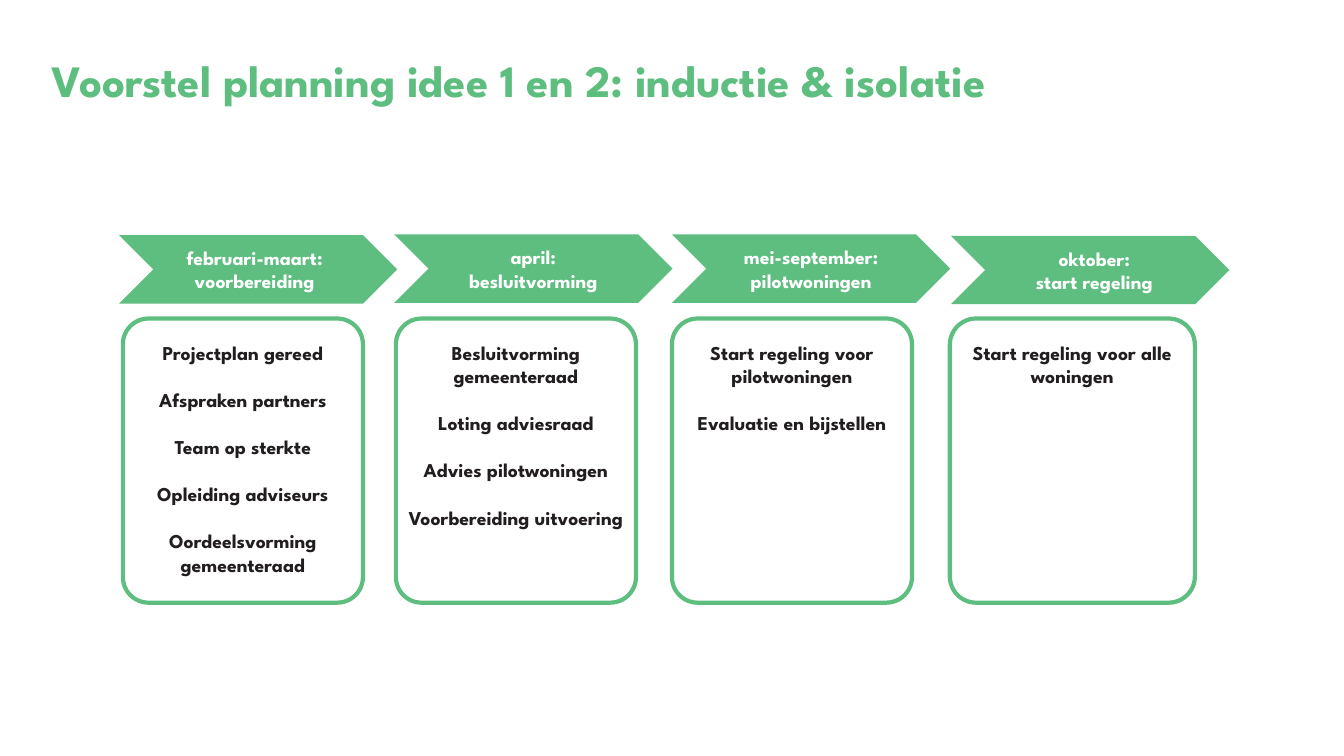
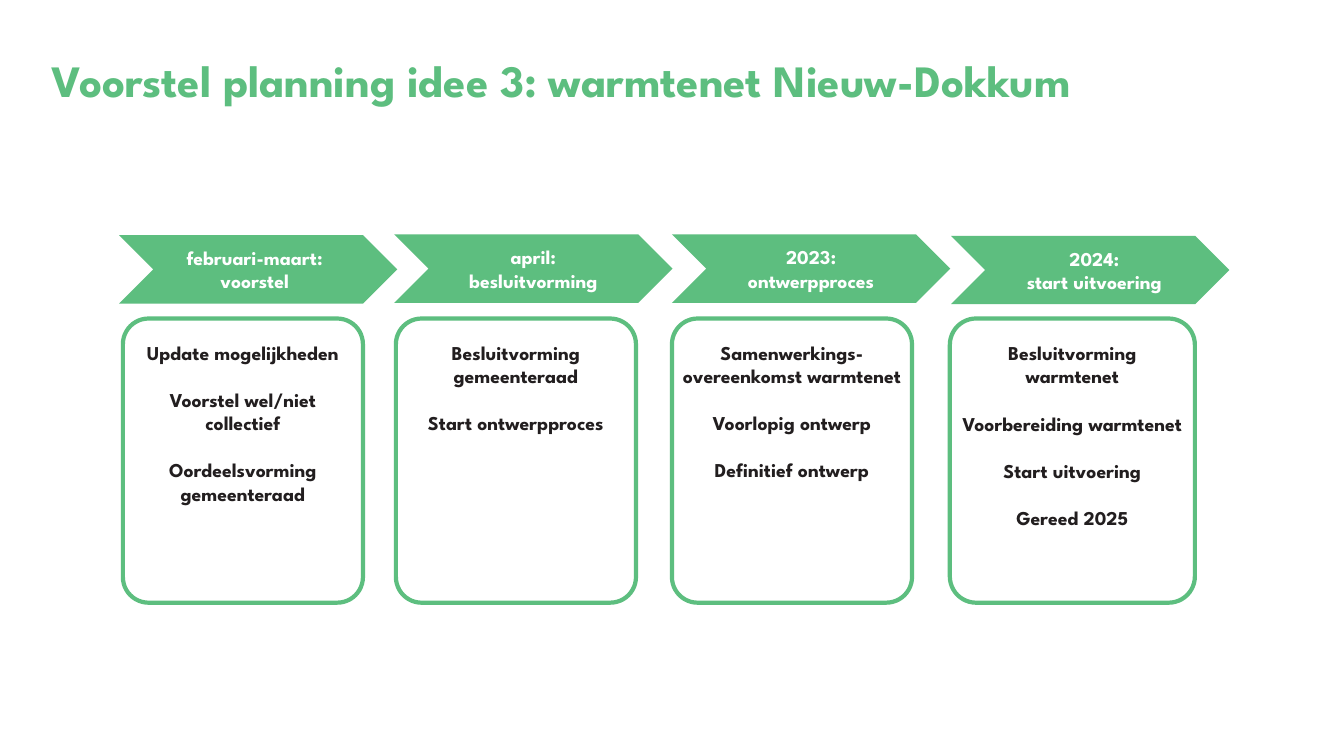
import pptx
import pptx.util
import pptx.dml.color
import pptx.enum.shapes
import pptx.enum.text

Pt = pptx.util.Pt
SHAPE = pptx.enum.shapes.MSO_SHAPE
ALIGN = pptx.enum.text.PP_ALIGN
ANCHOR = pptx.enum.text.MSO_ANCHOR

COLUMNS = [
    {"arrow_left": 85, "arrow_top": 168, "card_left": 87.8, "card_width": 171.5, "text_shift": -2.5},
    {"arrow_left": 281.6, "arrow_top": 167.5, "card_left": 282.8, "card_width": 171.5, "text_shift": 0},
    {"arrow_left": 480, "arrow_top": 167.5, "card_left": 480, "card_width": 171.5, "text_shift": 0},
    {"arrow_left": 679.3, "arrow_top": 168.5, "card_left": 678.5, "card_width": 175, "text_shift": 3},
]

PLANS = {
    "Voorstel planning idee 1 en 2: inductie & isolatie": [
        (["februari-maart:", "voorbereiding"],
         ["Projectplan gereed", "Afspraken partners", "Team op sterkte",
          "Opleiding adviseurs", "Oordeelsvorming gemeenteraad"]),
        (["april:", "besluitvorming"],
         ["Besluitvorming gemeenteraad", "Loting adviesraad",
          "Advies pilotwoningen", "Voorbereiding uitvoering"]),
        (["mei-september:", "pilotwoningen"],
         ["Start regeling voor pilotwoningen", "Evaluatie en bijstellen"]),
        (["oktober:", "start regeling"],
         ["Start regeling voor alle woningen"]),
    ],
    "Voorstel planning idee 3: warmtenet Nieuw-Dokkum": [
        (["februari-maart:", "voorstel"],
         ["Update mogelijkheden", "Voorstel wel/niet collectief",
          "Oordeelsvorming gemeenteraad"]),
        (["april:", "besluitvorming"],
         ["Besluitvorming gemeenteraad", "Start ontwerpproces"]),
        (["2023:", "ontwerpproces"],
         ["Samenwerkings-overeenkomst warmtenet", "Voorlopig ontwerp",
          "Definitief ontwerp"]),
        (["2024:", "start uitvoering"],
         ["Besluitvorming warmtenet", "Voorbereiding warmtenet",
          "Start uitvoering", "Gereed 2025"]),
    ],
}


def color(value):
    return pptx.dml.color.RGBColor.from_string(value)


def set_values(target, values):
    for name, value in values.items():
        setattr(target, name, value)


class Planner:
    green = "5DBE7F"
    white = "FFFFFF"
    ink = "221E1F"
    font = "League Spartan"

    def __init__(self):
        self.deck = pptx.Presentation()
        set_values(self.deck, {"slide_width": Pt(960), "slide_height": Pt(540)})
        self.page = None

    def new_page(self):
        self.page = self.deck.slides.add_slide(self.deck.slide_layouts[6])

    def add_text(self, box, lines, size, ink, frame_format, para_format, gap=0):
        frame = box.text_frame
        set_values(frame, {"word_wrap": True, **frame_format})
        for index, line in enumerate(lines):
            para = frame.add_paragraph() if index else frame.paragraphs[0]
            set_values(para, para_format)
            if index and gap:
                para.space_before = Pt(gap)
            span = para.add_run()
            span.text = line
            set_values(span.font, {"name": self.font, "size": Pt(size), "bold": True})
            span.font.color.rgb = color(ink)

    def shape(self, kind, left, top, width, height, fill):
        box = self.page.shapes.add_shape(kind, Pt(left), Pt(top), Pt(width), Pt(height))
        box.shadow.inherit = False
        box.fill.solid()
        box.fill.fore_color.rgb = color(fill)
        return box

    def title(self, text):
        box = self.page.shapes.add_textbox(Pt(30), Pt(29), Pt(900), Pt(60))
        self.add_text(box, [text], 32, self.green,
                      {"vertical_anchor": ANCHOR.MIDDLE},
                      {"alignment": ALIGN.LEFT, "line_spacing": 0.9})

    def arrow(self, column, lines):
        box = self.shape(SHAPE.CHEVRON, column["arrow_left"], column["arrow_top"],
                         198.8, 48.8, self.green)
        box.line.fill.background()
        shift = column["text_shift"]
        self.add_text(box, lines, 14, self.white,
                      {"vertical_anchor": ANCHOR.MIDDLE,
                       "margin_left": Pt(max(0, 2 * shift)),
                       "margin_right": Pt(max(0, -2 * shift)),
                       "margin_top": 0, "margin_bottom": 0},
                      {"alignment": ALIGN.CENTER})

    def card(self, column, lines):
        box = self.shape(SHAPE.ROUNDED_RECTANGLE, column["card_left"], 227.5,
                         column["card_width"], 203, self.white)
        box.adjustments[0] = 0.107
        box.line.color.rgb = color(self.green)
        box.line.width = Pt(3)
        self.add_text(box, lines, 14, self.ink,
                      {"vertical_anchor": ANCHOR.TOP,
                       "margin_left": Pt(1.5), "margin_right": Pt(1.5),
                       "margin_top": Pt(10.5), "margin_bottom": 0},
                      {"alignment": ALIGN.CENTER}, gap=16.8)


def main():
    planner = Planner()
    for title, phases in PLANS.items():
        planner.new_page()
        planner.title(title)
        for column, (heading, steps) in zip(COLUMNS, phases):
            planner.arrow(column, heading)
            planner.card(column, steps)
    planner.deck.save("out.pptx")


if __name__ == "__main__":
    main()
